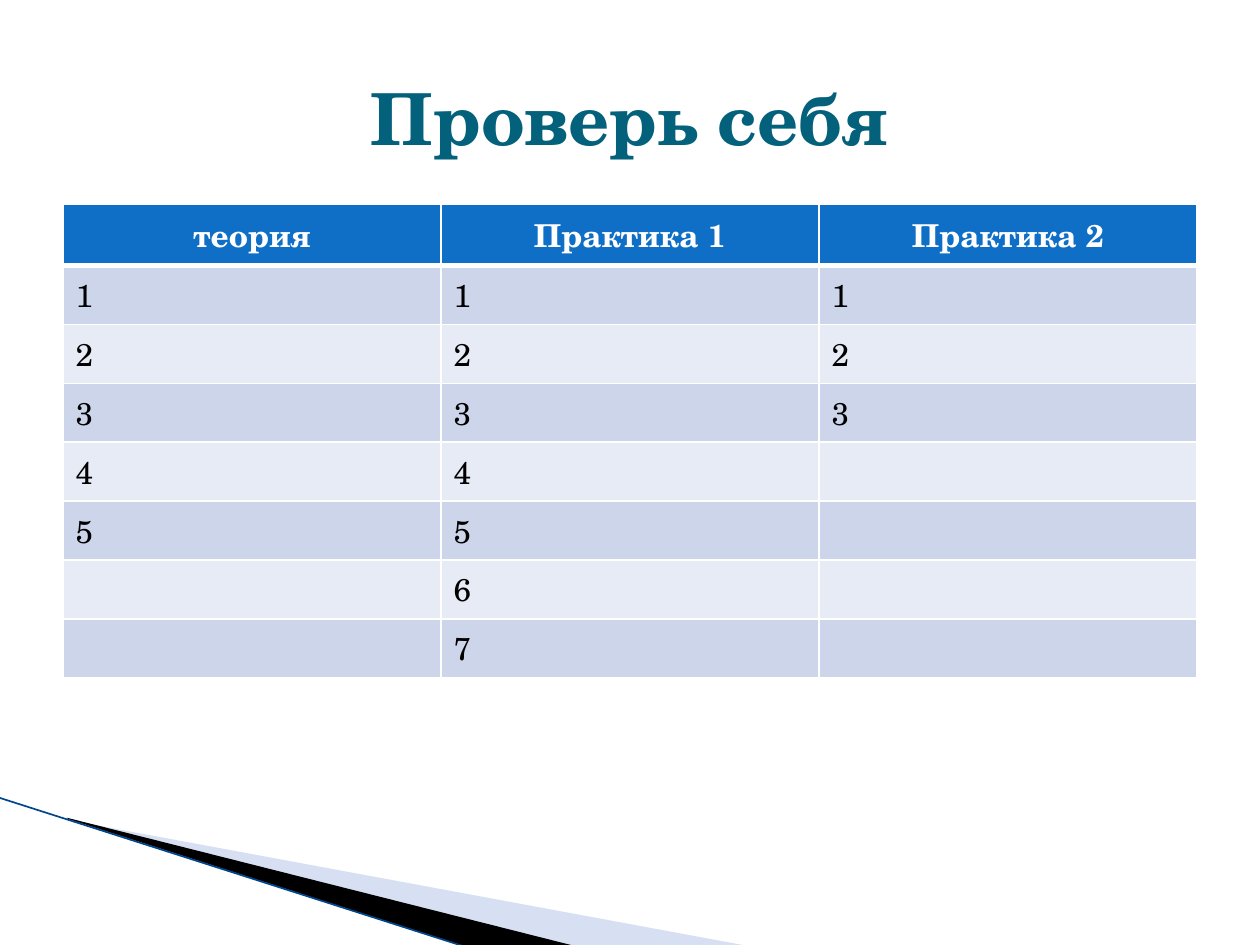
import pptx
import pptx.util
import pptx.dml.color
import pptx.enum.text
import pptx.oxml.ns
import lxml.etree

Inches = pptx.util.Inches
Pt = pptx.util.Pt
qn = pptx.oxml.ns.qn
ALIGN = pptx.enum.text.PP_ALIGN
MIDDLE = pptx.enum.text.MSO_ANCHOR.MIDDLE
FACE = "TeX Gyre Schola"


def color(code):
    return pptx.dml.color.RGBColor.from_string(code)


def write(para, text, size, code, bold, align):
    para.alignment = align
    run = para.add_run()
    run.text = text
    run.font.name = FACE
    run.font.size = Pt(size)
    run.font.bold = bold
    run.font.color.rgb = color(code)


deck = pptx.Presentation()
deck.slide_width = Inches(10)
deck.slide_height = Inches(7.5)
slide = deck.slides.add_slide(deck.slide_layouts[6])
shapes = slide.shapes

# Corner wedges: fill, opacity in percent, outline points
wedges = [
    ("9DB2E1", 40, [(0.55, 6.51), (5.95, 7.51), (4.56, 7.51), (0.55, 6.5)]),
    ("000000", 100, [(0.53, 6.49), (4.57, 7.51), (3.72, 7.52), (0.54, 6.5)]),
]
for code, solid, points in wedges:
    first, *rest = [(Inches(x), Inches(y)) for x, y in points]
    pen = shapes.build_freeform(*first)
    pen.add_line_segments(rest, close=True)
    wedge = pen.convert_to_shape()
    wedge.shadow.inherit = False
    wedge.fill.solid()
    wedge.fill.fore_color.rgb = color(code)
    wedge.line.fill.background()
    if solid < 100:
        tint = wedge.fill._xPr.find(".//" + qn("a:srgbClr"))
        lxml.etree.SubElement(tint, qn("a:alpha"), val=str(solid * 1000))

# Thin edge along the wedges
edge = shapes.add_connector(
    pptx.enum.shapes.MSO_CONNECTOR.STRAIGHT,
    Inches(-0.01), Inches(6.33), Inches(3.71), Inches(7.52))
edge.line.color.rgb = color("00468C")
edge.line.width = Pt(0.95)
lxml.etree.SubElement(edge._element.spPr, qn("a:effectLst"))

# Table: a header, then numbered tasks in each column
heads = ["теория", "Практика 1", "Практика 2"]
counts = [5, 7, 3]
rows = max(counts) + 1
table = shapes.add_table(rows, len(heads), Inches(0.5), Inches(1.62),
                         Inches(9), Inches(3.24)).table
for row in range(rows):
    for col, head in enumerate(heads):
        cell = table.cell(row, col)
        props = cell._tc.get_or_add_tcPr()
        for side in "LRTB":
            thick = (row, side) in [(0, "B"), (1, "T")]
            line = lxml.etree.SubElement(
                props, qn("a:ln" + side), w=str(Pt(3 if thick else 1)))
            paint = lxml.etree.SubElement(line, qn("a:solidFill"))
            lxml.etree.SubElement(paint, qn("a:srgbClr"), val="FFFFFF")
        cell.fill.solid()
        para = cell.text_frame.paragraphs[0]
        if row == 0:
            cell.fill.fore_color.rgb = color("0F6FC6")
            write(para, head, 18, "FFFFFF", True, ALIGN.CENTER)
            continue
        cell.fill.fore_color.rgb = color("CCD5EA" if row % 2 else "E7EBF5")
        if row <= counts[col]:
            write(para, str(row), 18, "000000", False, ALIGN.LEFT)
        else:
            para.font.size = Pt(18)

# Title
title = shapes.add_textbox(Inches(0.5), Inches(0.3), Inches(9), Inches(1.25))
frame = title.text_frame
frame.word_wrap = True
frame.vertical_anchor = MIDDLE
write(frame.paragraphs[0], "Проверь себя", 41, "04617B", True, ALIGN.CENTER)

deck.save("out.pptx")
